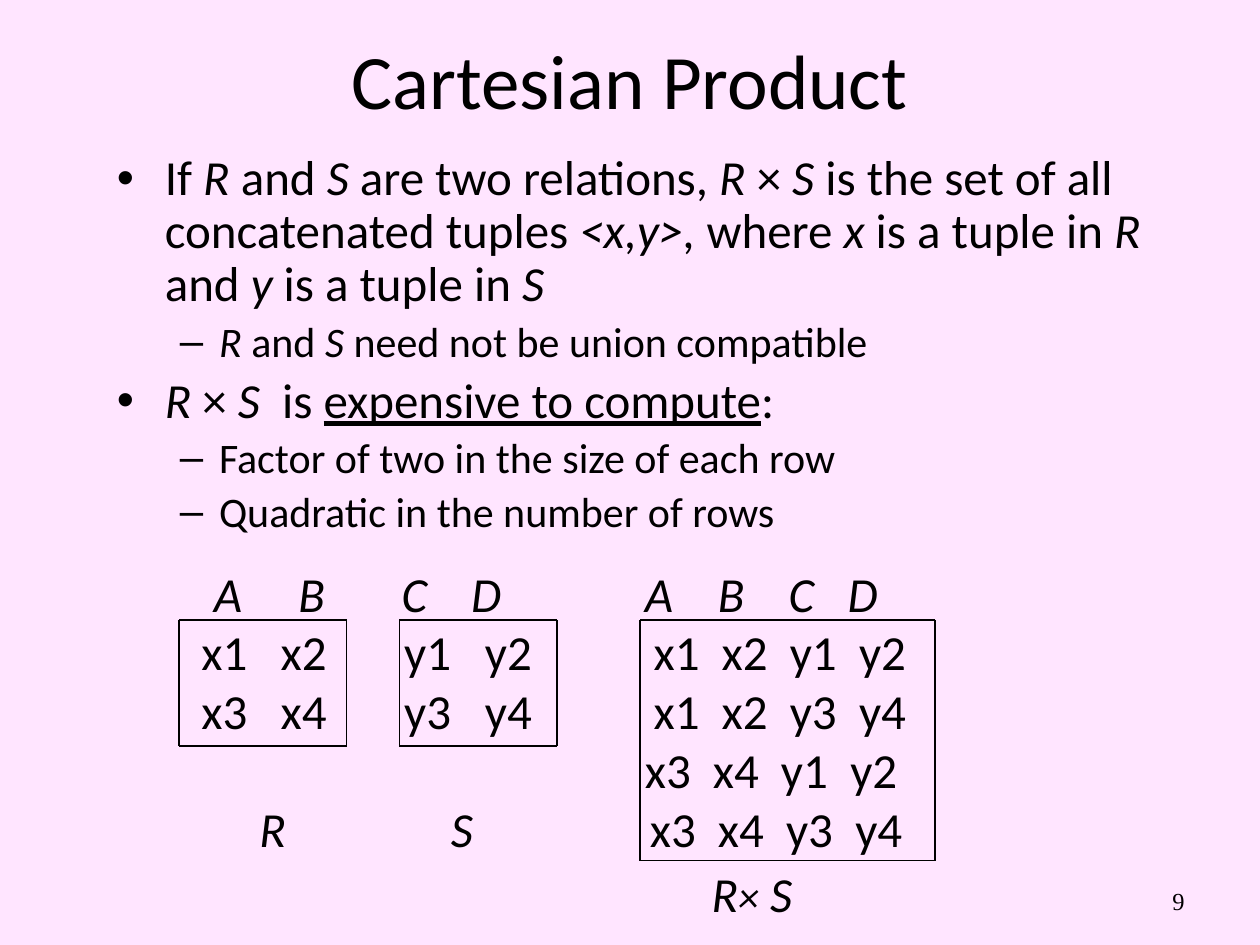
import pptx
import pptx.dml.color
import pptx.enum.shapes
import pptx.enum.text
import pptx.oxml.ns
import pptx.util
from lxml import etree

Inches = pptx.util.Inches
Pt = pptx.util.Pt
ALIGN = pptx.enum.text.PP_ALIGN
ANCHOR = pptx.enum.text.MSO_ANCHOR
BLACK = pptx.dml.color.RGBColor(0x00, 0x00, 0x00)
PINK = pptx.dml.color.RGBColor(0xFF, 0xE5, 0xFF)


def add_xml(parent, tag, **attributes):
    return etree.SubElement(parent, pptx.oxml.ns.qn(tag), attributes)


class SlideBuilder:
    font = "Calibri"
    color = BLACK

    def __init__(self, deck):
        self.page = deck.slides.add_slide(deck.slide_layouts[6])
        fill = self.page.background.fill
        fill.solid()
        fill.fore_color.rgb = PINK

    def box(self, left, top, width, height, anchor=ANCHOR.TOP):
        box = self.page.shapes.add_textbox(
            Inches(left), Inches(top), Inches(width), Inches(height))
        frame = box.text_frame
        frame.word_wrap = True
        frame.vertical_anchor = anchor
        return frame

    def style(self, span, size, font=None):
        span.font.size = Pt(size)
        span.font.name = font or self.font
        span.font.color.rgb = self.color

    def label(self, place, text, size, align, font=None):
        frame = self.box(*place, anchor=ANCHOR.MIDDLE)
        frame.text = text
        para = frame.paragraphs[0]
        para.alignment = align
        self.style(para.runs[0], size, font)

    def paragraph(self, frame, index):
        return frame.add_paragraph() if index else frame.paragraphs[0]

    def spans(self, para, text, size):
        """Stars switch italics, underscores switch underlining."""
        for i, part in enumerate(text.split("*")):
            for j, piece in enumerate(part.split("_")):
                if piece:
                    span = para.add_run()
                    span.text = piece
                    self.style(span, size)
                    span.font.italic = i % 2 == 1
                    span.font.underline = j % 2 == 1

    def bullets(self, place, items):
        frame = self.box(*place)
        for index, (level, text) in enumerate(items):
            size, margin, indent, mark = [
                (28, 0.38, -0.38, "•"), (24, 0.81, -0.31, "–")][level]
            para = self.paragraph(frame, index)
            para.level = level
            para.line_spacing = 0.9
            self.spans(para, text, size)
            props = para._p.get_or_add_pPr()
            props.set("marL", str(Inches(margin)))
            props.set("indent", str(Inches(indent)))
            add_xml(add_xml(props, "a:spcBef"), "a:spcPct", val="20000")
            add_xml(props, "a:buFont", typeface="Arial")
            add_xml(props, "a:buChar", char=mark)

    def tabbed_rows(self, place, rows):
        """Each row gives its column positions on the slide and its cells."""
        frame = self.box(*place)
        start = place[0] + 0.1
        for index, (columns, cells) in enumerate(rows):
            para = self.paragraph(frame, index)
            self.spans(para, "".join("\t" + cell for cell in cells), 28)
            stops = add_xml(para._p.get_or_add_pPr(), "a:tabLst")
            for column in columns:
                add_xml(stops, "a:tab", pos=str(Inches(column - start)), algn="l")
        return frame

    def line(self, x1, y1, x2, y2):
        line = self.page.shapes.add_connector(
            pptx.enum.shapes.MSO_CONNECTOR.STRAIGHT,
            Inches(x1), Inches(y1), Inches(x2), Inches(y2))
        line.line.color.rgb = self.color
        line.line.width = Pt(0.75)
        add_xml(line._element.spPr, "a:effectLst")

    def outline(self, left, top, right, bottom):
        for y in (top, bottom):
            self.line(left, y, right, y)
        for x in (left, right):
            self.line(x, top, x, bottom)


def main():
    deck = pptx.Presentation()
    deck.slide_width, deck.slide_height = Inches(10), Inches(7.5)
    slide = SlideBuilder(deck)

    # Page number and title
    slide.label((7.17, 6.95, 2.33, 0.4), "9", 14, ALIGN.RIGHT, "Times New Roman")
    slide.label((0.75, 0, 8.5, 1.25), "Cartesian Product", 44, ALIGN.CENTER)

    # Definition and cost
    slide.bullets((0.83, 1.17, 8.42, 3.42), [
        (0, "If *R *and *S *are two relations, *R *× *S* is the set of all "
            "concatenated tuples *<x,y>,* where *x* is a tuple in *R* and *y* "
            "is a tuple in *S*"),
        (1, "*R* and *S* need not be union compatible"),
        (0, "*R *× *S*  is _expensive to compute_:"),
        (1, "Factor of two in the size of each row"),
        (1, "Quadratic in the number of rows"),
    ])

    # Example relations R and S beside their product
    pair_columns = [1.6, 2.23, 3.21, 3.85]
    product_columns = [5.19, 5.73, 6.27, 6.82]
    all_columns = pair_columns + product_columns
    example = slide.tabbed_rows((1.42, 4.42, 6.37, 2.95), [
        ([1.7, 2.37, 3.19, 3.74, 5.12, 5.7, 6.26, 6.73],
         [f"*{name}*" for name in "ABCDABCD"]),
        (all_columns, "x1 x2 y1 y2 x1 x2 y1 y2".split()),
        (all_columns, "x3 x4 y3 y4 x1 x2 y3 y4".split()),
        ([x - 0.07 for x in product_columns], "x3 x4 y1 y2".split()),
        ([2.06, 3.58] + [x - 0.03 for x in product_columns],
         "*R* *S* x3 x4 y3 y4".split()),
        ([5.65], ["*R**×** S*"]),
    ])
    caption = example.paragraphs[-1]
    caption.line_spacing = 1.1
    for span in caption.runs:
        span.font.italic = True
        if span.text == "×":
            span.font.size = Pt(24)

    # Table outlines
    for left, right, bottom in [
            (1.42, 2.75, 5.92), (3.17, 4.42, 5.92), (5.08, 7.42, 6.83)]:
        slide.outline(left, 4.92, right, bottom)

    deck.save("out.pptx")


if __name__ == "__main__":
    main()
